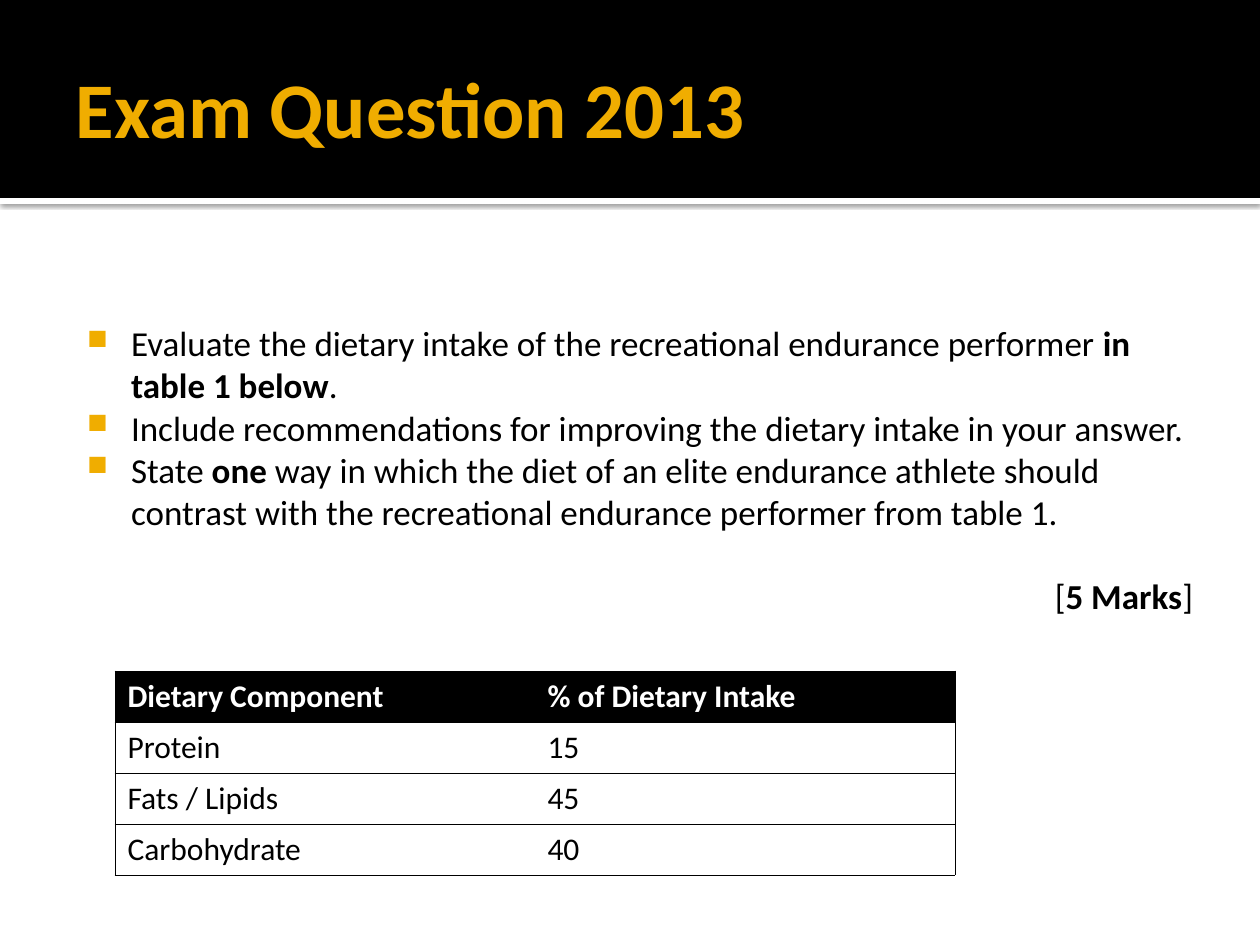
"""Build the exam question slide on evaluating dietary intake."""
from dataclasses import dataclass

from lxml import etree
from pptx import Presentation
from pptx.dml.color import RGBColor
from pptx.enum.shapes import MSO_SHAPE
from pptx.enum.text import MSO_ANCHOR, PP_ALIGN
from pptx.oxml.ns import qn
from pptx.util import Emu, Pt

RECTANGLE = MSO_SHAPE.RECTANGLE
MIDDLE, TOP = MSO_ANCHOR.MIDDLE, MSO_ANCHOR.TOP
LEFT, RIGHT = PP_ALIGN.LEFT, PP_ALIGN.RIGHT
PX_PER_INCH = 126


@dataclass(frozen=True)
class Theme:
    font: str = "Calibri"
    accent: str = "F0AD00"
    dark: str = "000000"
    light: str = "FFFFFF"
    title_size: int = 45
    body_size: int = 20
    table_size: int = 18
    border_width: float = 0.5


THEME = Theme()

TITLE = [("Exam Question 2013", True)]
TASKS = [
    [
        ("Evaluate the dietary intake of the recreational endurance performer ", False),
        ("in table 1 below", True),
        (".", False),
    ],
    [("Include recommendations for improving the dietary intake in your answer.", False)],
    [
        ("State ", False),
        ("one", True),
        (" way in which the diet of an elite endurance athlete should contrast "
         "with the recreational endurance performer from table 1.", False),
    ],
]
MARKS = [("[", False), ("5 Marks", True), ("]", False)]
DIET = [
    ("Dietary Component", "% of Dietary Intake"),
    ("Protein", "15"),
    ("Fats / Lipids", "45"),
    ("Carbohydrate", "40"),
]

SLIDE_SIZE = (1260, 945)
BANNER_BOX = (0, 0, 1260, 198)
STRIP_BOX = (0, 198, 1260, 6)
TITLE_BOX = (63, 21, 1134, 173)
BODY_BOX = (63, 267, 1143, 454)
TABLE_BOX = (115, 671, 840, 204)
TITLE_INSETS = (13, 6, 6, 6)
BODY_INSETS = (8, 55, 13, 6)
BULLET_MARGIN, BULLET_HANG = 60, 44
MARKS_GAP = 24


def px(length):
    return Emu(round(length * 914400 / PX_PER_INCH))


def color(value):
    return RGBColor.from_string(value)


def add_element(parent, tag, **attributes):
    return etree.SubElement(parent, qn(tag), attributes)


def add_bar(slide, box, fill):
    bar = slide.shapes.add_shape(RECTANGLE, *map(px, box))
    bar.shadow.inherit = False
    bar.fill.solid()
    bar.fill.fore_color.rgb = color(fill)
    bar.line.fill.background()
    return bar


def add_shadow(shape):
    effects = shape._element.spPr.find(qn("a:effectLst"))
    shadow = add_element(
        effects, "a:outerShdw", blurRad=str(Pt(2.5)), dist=str(Pt(0.8)),
        dir="5400000", algn="tl", rotWithShape="0")
    shade = add_element(shadow, "a:srgbClr", val=THEME.dark)
    add_element(shade, "a:alpha", val="60000")


def add_text_frame(slide, box, insets, anchor):
    text_frame = slide.shapes.add_textbox(*map(px, box)).text_frame
    text_frame.word_wrap = True
    text_frame.vertical_anchor = anchor
    (text_frame.margin_left, text_frame.margin_top,
     text_frame.margin_right, text_frame.margin_bottom) = map(px, insets)
    return text_frame


def write_runs(paragraph, runs, size, ink, align=LEFT):
    paragraph.alignment = align
    for text, bold in runs:
        run = paragraph.add_run()
        run.text = text
        run.font.name = THEME.font
        run.font.size = Pt(size)
        run.font.bold = bold
        run.font.color.rgb = color(ink)


def add_bullet(paragraph):
    properties = paragraph._p.get_or_add_pPr()
    properties.set("marL", str(px(BULLET_MARGIN)))
    properties.set("indent", str(px(-BULLET_HANG)))
    add_element(add_element(properties, "a:buClr"), "a:srgbClr", val=THEME.accent)
    add_element(properties, "a:buSzPct", val="80000")
    add_element(properties, "a:buChar", char="■")


def set_borders(cell, visible_sides):
    properties = cell._tc.get_or_add_tcPr()
    for side in "LRTB":
        line = add_element(properties, f"a:ln{side}", w=str(Pt(THEME.border_width)))
        if side in visible_sides:
            fill = add_element(line, "a:solidFill")
            add_element(fill, "a:srgbClr", val=THEME.dark)
        else:
            add_element(line, "a:noFill")


def add_body(slide):
    text_frame = add_text_frame(slide, BODY_BOX, BODY_INSETS, TOP)
    paragraph = text_frame.paragraphs[0]
    for task in TASKS:
        write_runs(paragraph, task, THEME.body_size, THEME.dark)
        add_bullet(paragraph)
        paragraph = text_frame.add_paragraph()
    write_runs(paragraph, MARKS, THEME.body_size, THEME.dark, RIGHT)
    paragraph.space_before = Pt(MARKS_GAP)


def add_diet_table(slide):
    row_count, column_count = len(DIET), len(DIET[0])
    table = slide.shapes.add_table(row_count, column_count, *map(px, TABLE_BOX)).table
    table.horz_banding = False
    for row_index, values in enumerate(DIET):
        is_header = row_index == 0
        fill, ink = (THEME.dark, THEME.light) if is_header else (THEME.light, THEME.dark)
        for column_index, value in enumerate(values):
            cell = table.cell(row_index, column_index)
            set_borders(cell, "TB" + ("L" if column_index == 0 else "R"))
            cell.fill.solid()
            cell.fill.fore_color.rgb = color(fill)
            paragraph = cell.text_frame.paragraphs[0]
            write_runs(paragraph, [(value, is_header)], THEME.table_size, ink)


def main():
    presentation = Presentation()
    presentation.slide_width, presentation.slide_height = map(px, SLIDE_SIZE)
    slide = presentation.slides.add_slide(presentation.slide_layouts[6])
    add_shadow(add_bar(slide, STRIP_BOX, THEME.light))
    add_bar(slide, BANNER_BOX, THEME.dark)
    title_frame = add_text_frame(slide, TITLE_BOX, TITLE_INSETS, MIDDLE)
    write_runs(title_frame.paragraphs[0], TITLE, THEME.title_size, THEME.accent)
    add_body(slide)
    add_diet_table(slide)
    presentation.save("out.pptx")


if __name__ == "__main__":
    main()
